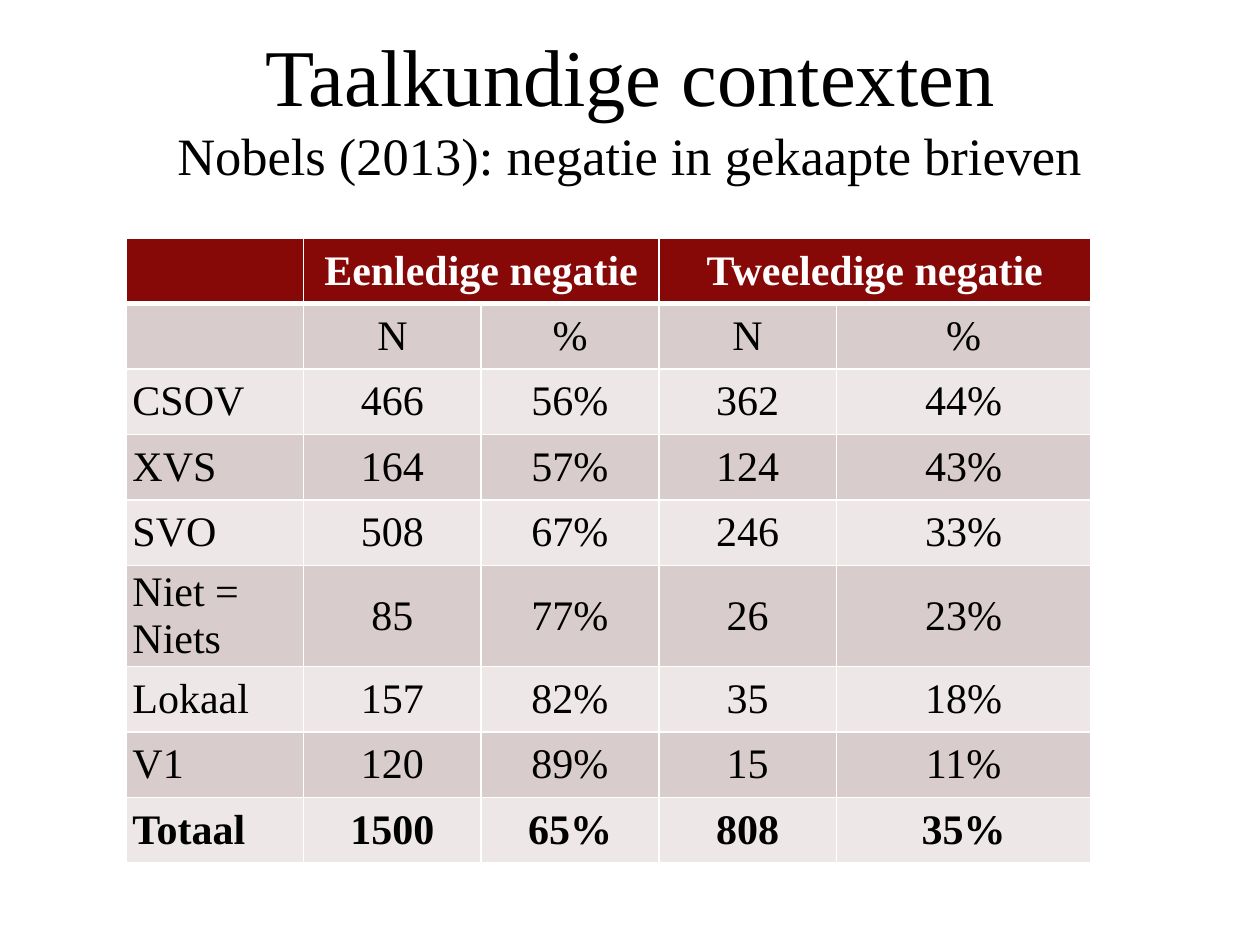
import pptx
import pptx.dml.color
import pptx.enum.text
import pptx.oxml
import pptx.oxml.ns
import pptx.util

Cm = pptx.util.Cm
Pt = pptx.util.Pt
RGBColor = pptx.dml.color.RGBColor
ALIGN = pptx.enum.text.PP_ALIGN
MIDDLE = pptx.enum.text.MSO_ANCHOR.MIDDLE

BLACK = RGBColor(0x00, 0x00, 0x00)
WHITE = RGBColor(0xFF, 0xFF, 0xFF)
DARK_RED = RGBColor(0x86, 0x09, 0x08)
BAND_DARK = RGBColor(0xD9, 0xCC, 0xCC)
BAND_LIGHT = RGBColor(0xED, 0xE7, 0xE7)

COLUMN_WIDTHS = [3.58, 3.58, 3.58, 3.58, 5.13]
ROWS = [
    ["", "Eenledige negatie", "", "Tweeledige negatie", ""],
    ["", "N", "%", "N", "%"],
    ["CSOV", "466", "56%", "362", "44%"],
    ["XVS", "164", "57%", "124", "43%"],
    ["SVO", "508", "67%", "246", "33%"],
    ["Niet =\nNiets", "85", "77%", "26", "23%"],
    ["Lokaal", "157", "82%", "35", "18%"],
    ["V1", "120", "89%", "15", "11%"],
    ["Totaal", "1500", "65%", "808", "35%"],
]


def add_run(paragraph, text, size, color, bold=False):
    run = paragraph.add_run()
    run.text = text
    font_format = {"name": "Times New Roman", "size": Pt(size), "bold": bold}
    for name, value in font_format.items():
        setattr(run.font, name, value)
    run.font.color.rgb = color


def add_border(cell, side, points):
    cell._tc.get_or_add_tcPr().append(pptx.oxml.parse_xml(
        f'<a:{side} {pptx.oxml.ns.nsdecls("a")} w="{Pt(points)}">'
        f'<a:solidFill><a:srgbClr val="{WHITE}"/></a:solidFill></a:{side}>'
    ))


presentation = pptx.Presentation()
presentation.slide_width = Cm(25.4)
presentation.slide_height = Cm(19.05)
slide = presentation.slides.add_slide(presentation.slide_layouts[6])

title = slide.shapes.add_textbox(Cm(2.54), Cm(0.84), Cm(20.32), Cm(2.6))
title_format = {"word_wrap": True, "vertical_anchor": MIDDLE}
for name, value in title_format.items():
    setattr(title.text_frame, name, value)
paragraph = title.text_frame.paragraphs[0]
paragraph.alignment = ALIGN.CENTER
add_run(paragraph, "Taalkundige contexten", 46, BLACK)
paragraph.add_line_break()
add_run(paragraph, "Nobels (2013): negatie in gekaapte brieven", 30, BLACK)

table = slide.shapes.add_table(
    len(ROWS), len(COLUMN_WIDTHS), Cm(2.54), Cm(4.8), Cm(sum(COLUMN_WIDTHS)), Cm(12.36)
).table
for column, width in zip(table.columns, COLUMN_WIDTHS):
    column.width = Cm(width)

cell_format = {
    "vertical_anchor": MIDDLE,
    "margin_left": Cm(0.13),
    "margin_right": Cm(0.13),
    "margin_top": 0,
    "margin_bottom": 0,
}
last_row = len(ROWS) - 1
for row_index, texts in enumerate(ROWS):
    header = row_index == 0
    table.rows[row_index].height = Cm(1.8 if "\n" in texts[0] else 1.32)
    band = BAND_DARK if row_index % 2 else BAND_LIGHT
    for column_index, text in enumerate(texts):
        cell = table.cell(row_index, column_index)
        for name, value in cell_format.items():
            setattr(cell, name, value)
        border_widths = {
            "lnL": 1,
            "lnR": 1,
            "lnT": 3 if row_index == 1 else 1,
            "lnB": 3 if header else 1,
        }
        for side, points in border_widths.items():
            add_border(cell, side, points)
        cell.fill.solid()
        cell.fill.fore_color.rgb = DARK_RED if header else band
        if not text:
            continue
        for line_index, line in enumerate(text.split("\n")):
            frame = cell.text_frame
            paragraph = frame.add_paragraph() if line_index else frame.paragraphs[0]
            paragraph.alignment = ALIGN.CENTER if column_index else ALIGN.LEFT
            add_run(paragraph, line, 24, WHITE if header else BLACK,
                    header or row_index == last_row)

for first in (1, 3):
    table.cell(0, first).merge(table.cell(0, first + 1))

presentation.save("out.pptx")
